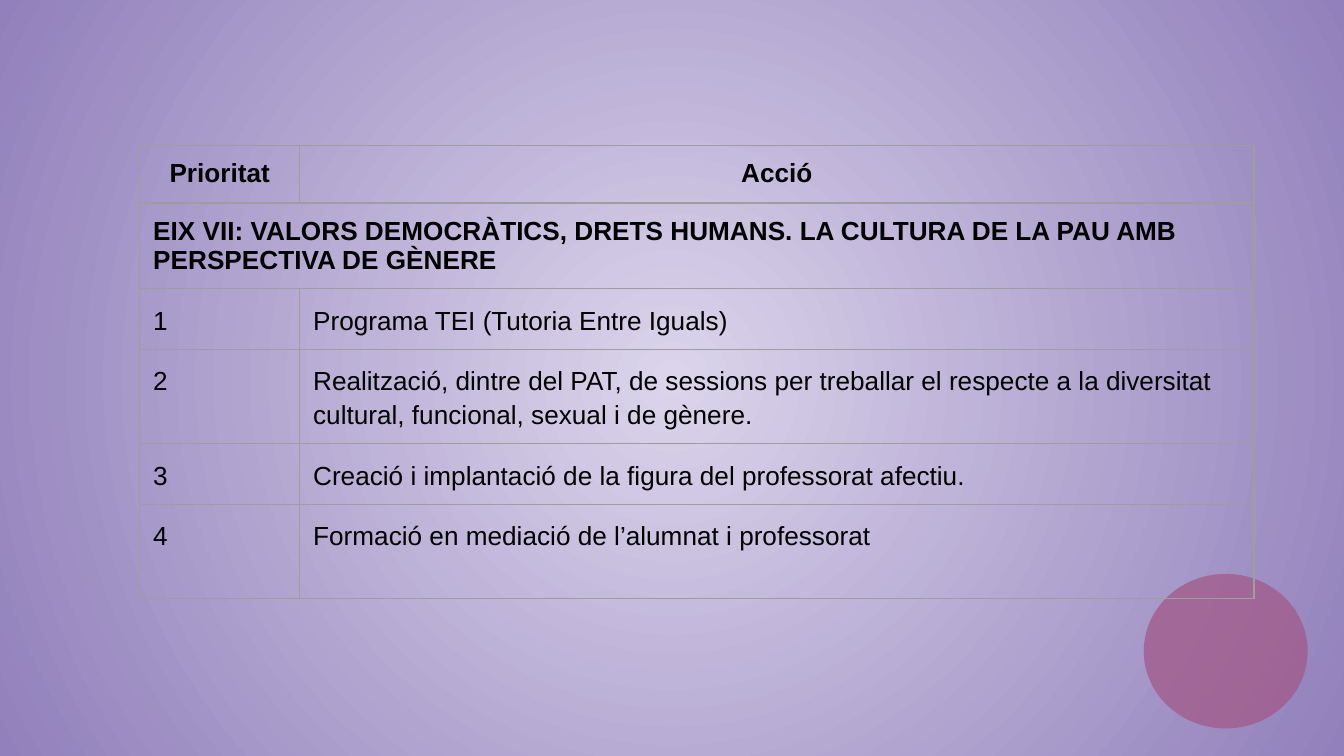
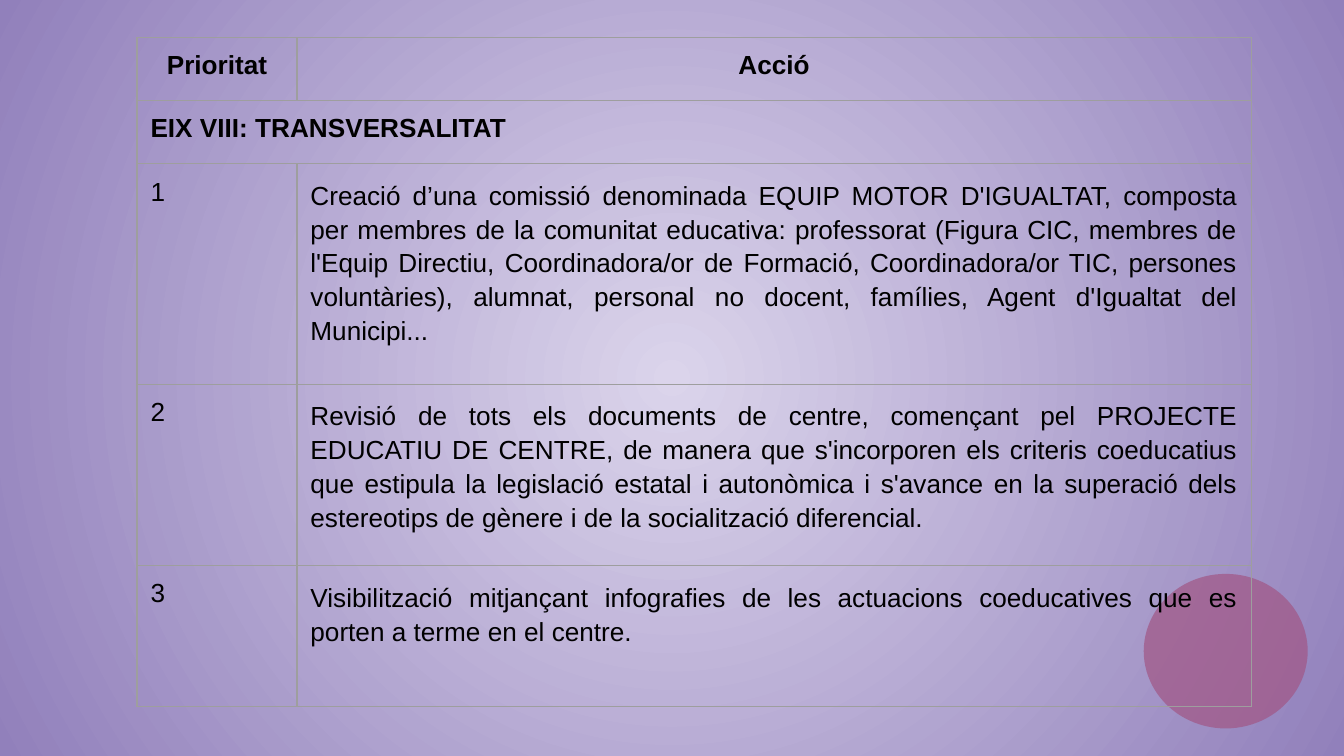
from dataclasses import dataclass
from typing import Optional

from lxml.etree import SubElement
from pptx import Presentation
from pptx.dml.color import RGBColor
from pptx.enum.shapes import MSO_SHAPE as Shape
from pptx.enum.text import PP_ALIGN as Align
from pptx.oxml.ns import qn
from pptx.util import Inches, Pt

COLORS = {
    "glow": "DBD4EB",
    "edge": "9180BB",
    "disc": "A15887",
    "border": "9E9E9E",
    "text": "000000",
}
FONT = "Arial"
FONT_SIZE = 14
CELL_MARGIN = 0.1
COLUMN_WIDTHS = (1.19, 7.1)
HEADINGS = ("Prioritat", "Acció")
ACTION_SPACING = 1.15


@dataclass(frozen=True)
class Action:
    text: str
    height: float
    align: Optional[Align] = Align.JUSTIFY


@dataclass(frozen=True)
class AxisPlan:
    left: float
    top: float
    title: str
    heading_height: float
    number_spacing: Optional[float]
    actions: tuple[Action, ...]


PLANS = (
    AxisPlan(
        1.04, 1.08,
        "EIX VII: VALORS DEMOCRÀTICS, DRETS HUMANS. LA CULTURA DE LA PAU AMB "
        "PERSPECTIVA DE GÈNERE",
        0.43, ACTION_SPACING,
        (
            Action("Programa TEI (Tutoria Entre Iguals)", 0.43),
            Action(
                "Realització, dintre del PAT, de sessions per treballar el respecte "
                "a la diversitat cultural, funcional, sexual i de gènere.",
                0.43, None,
            ),
            Action("Creació i implantació de la figura del professorat afectiu.", 0.43, None),
            Action("Formació en mediació de l’alumnat i professorat", 0.7, None),
        ),
    ),
    AxisPlan(
        1.02, 0.28, "EIX VIII: TRANSVERSALITAT", 0.47, None,
        (
            Action(
                "Creació d’una comissió denominada EQUIP MOTOR D'IGUALTAT, composta per "
                "membres de la comunitat educativa: professorat (Figura CIC, membres de "
                "l'Equip Directiu, Coordinadora/or de Formació, Coordinadora/or TIC, "
                "persones voluntàries), alumnat, personal no docent, famílies, Agent "
                "d'Igualtat del Municipi...",
                1.64,
            ),
            Action(
                "Revisió de tots els documents de centre, començant pel PROJECTE EDUCATIU "
                "DE CENTRE, de manera que s'incorporen els criteris coeducatius que "
                "estipula la legislació estatal i autonòmica i s'avance en la superació "
                "dels estereotips de gènere i de la socialització diferencial.",
                1.35,
            ),
            Action(
                "Visibilització mitjançant infografies de les actuacions coeducatives "
                "que es porten a terme en el centre.",
                1.05,
            ),
        ),
    ),
)


def color(name: str) -> RGBColor:
    return RGBColor.from_string(COLORS[name])


def set_background(master) -> None:
    fill = master.background.fill
    fill.gradient()
    for stop, position, name in zip(fill.gradient_stops, (0, 1), ("glow", "edge")):
        stop.position = position
        stop.color.rgb = color(name)
    gradient = next(master.element.iter(qn("a:gradFill")))
    for linear in gradient.findall(qn("a:lin")):
        gradient.remove(linear)
    circle = SubElement(gradient, qn("a:path"), {"path": "circle"})
    SubElement(circle, qn("a:fillToRect"), dict.fromkeys("ltrb", "50000"))


def add_disc(slide) -> None:
    disc = slide.shapes.add_shape(
        Shape.OVAL, Inches(8.51), Inches(4.27), Inches(1.22), Inches(1.15)
    )
    disc.shadow.inherit = False
    disc.fill.solid()
    disc.fill.fore_color.rgb = color("disc")
    disc.line.fill.background()
    fill_color = next(disc.element.spPr.iter(qn("a:srgbClr")))
    SubElement(fill_color, qn("a:alpha"), {"val": "73000"})


def style_cell(cell) -> None:
    properties = cell._tc.get_or_add_tcPr()
    for side in "LRTB":
        line = SubElement(properties, qn(f"a:ln{side}"), {"w": str(Pt(0.75))})
        line_fill = SubElement(line, qn("a:solidFill"))
        SubElement(line_fill, qn("a:srgbClr"), {"val": COLORS["border"]})
    cell.fill.background()
    cell.margin_left = cell.margin_right = Inches(CELL_MARGIN)
    cell.margin_top = cell.margin_bottom = Inches(CELL_MARGIN)


def write_text(
    cell,
    text: str,
    *,
    bold: bool = False,
    align: Optional[Align] = None,
    spacing: Optional[float] = None,
) -> None:
    paragraph = cell.text_frame.paragraphs[0]
    paragraph.alignment = align
    paragraph.line_spacing = spacing
    run = paragraph.add_run()
    run.text = text
    run.font.name = FONT
    run.font.size = Pt(FONT_SIZE)
    run.font.bold = bold
    run.font.color.rgb = color("text")


def add_plan_table(slide, plan: AxisPlan) -> None:
    heights = [plan.heading_height] * 2 + [action.height for action in plan.actions]
    table = slide.shapes.add_table(
        len(heights), len(COLUMN_WIDTHS), Inches(plan.left), Inches(plan.top),
        Inches(sum(COLUMN_WIDTHS)), Inches(sum(heights)),
    ).table
    table.horz_banding = False
    table.first_row = False
    for column, width in zip(table.columns, COLUMN_WIDTHS):
        column.width = Inches(width)
    for row, height in zip(table.rows, heights):
        row.height = Inches(height)
    for cell in table.iter_cells():
        style_cell(cell)

    for index, heading in enumerate(HEADINGS):
        write_text(table.cell(0, index), heading, bold=True, align=Align.CENTER)
    table.cell(1, 0).merge(table.cell(1, 1))
    write_text(table.cell(1, 0), plan.title, bold=True)
    for number, action in enumerate(plan.actions, start=1):
        row_index = number + 1
        write_text(table.cell(row_index, 0), str(number), spacing=plan.number_spacing)
        write_text(
            table.cell(row_index, 1), action.text,
            align=action.align, spacing=ACTION_SPACING,
        )


def main() -> None:
    presentation = Presentation()
    presentation.slide_width = Inches(10)
    presentation.slide_height = Inches(5.625)
    set_background(presentation.slide_master)
    blank_layout = presentation.slide_layouts[6]
    for plan in PLANS:
        slide = presentation.slides.add_slide(blank_layout)
        add_disc(slide)
        add_plan_table(slide, plan)
    presentation.save("out.pptx")


if __name__ == "__main__":
    main()
